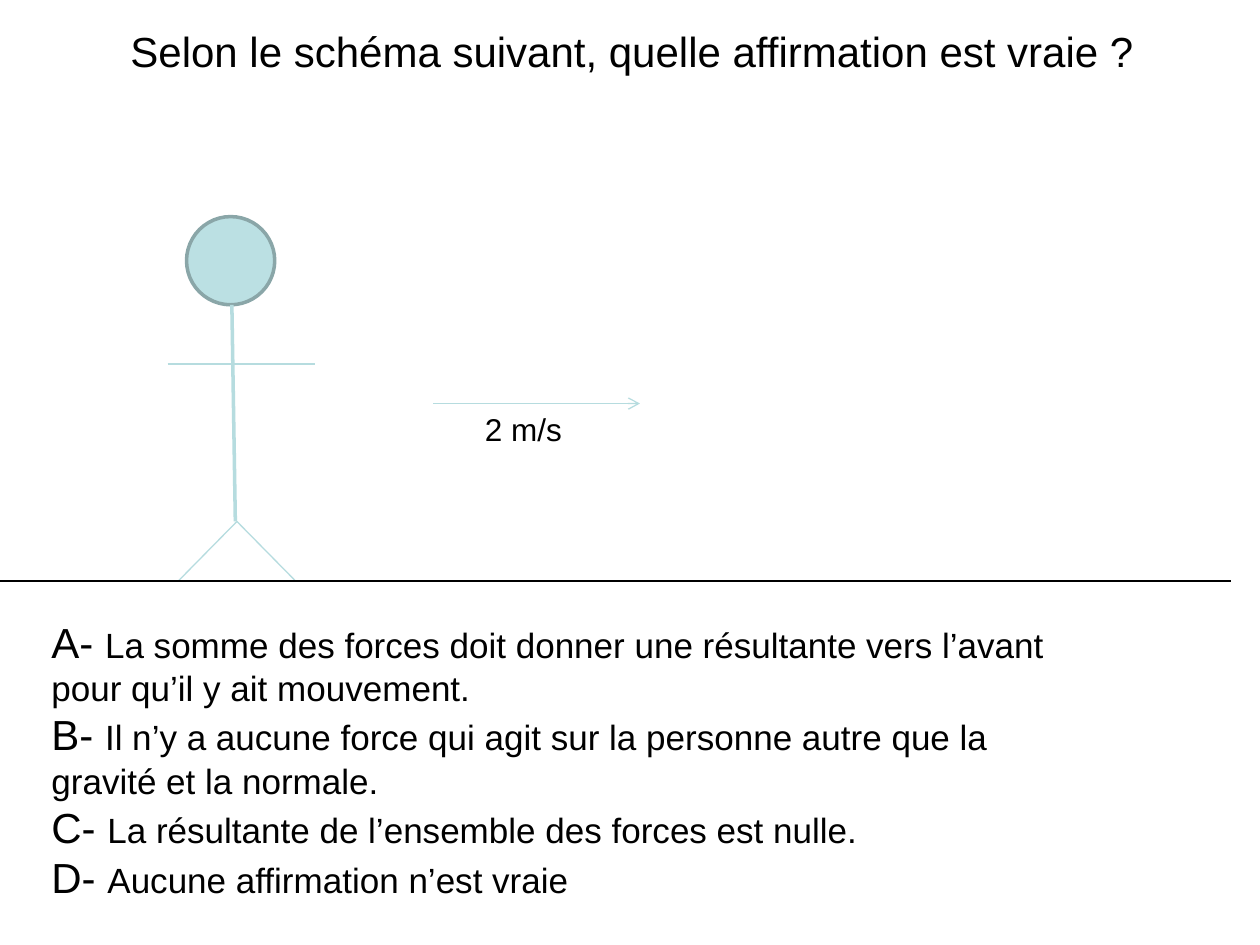
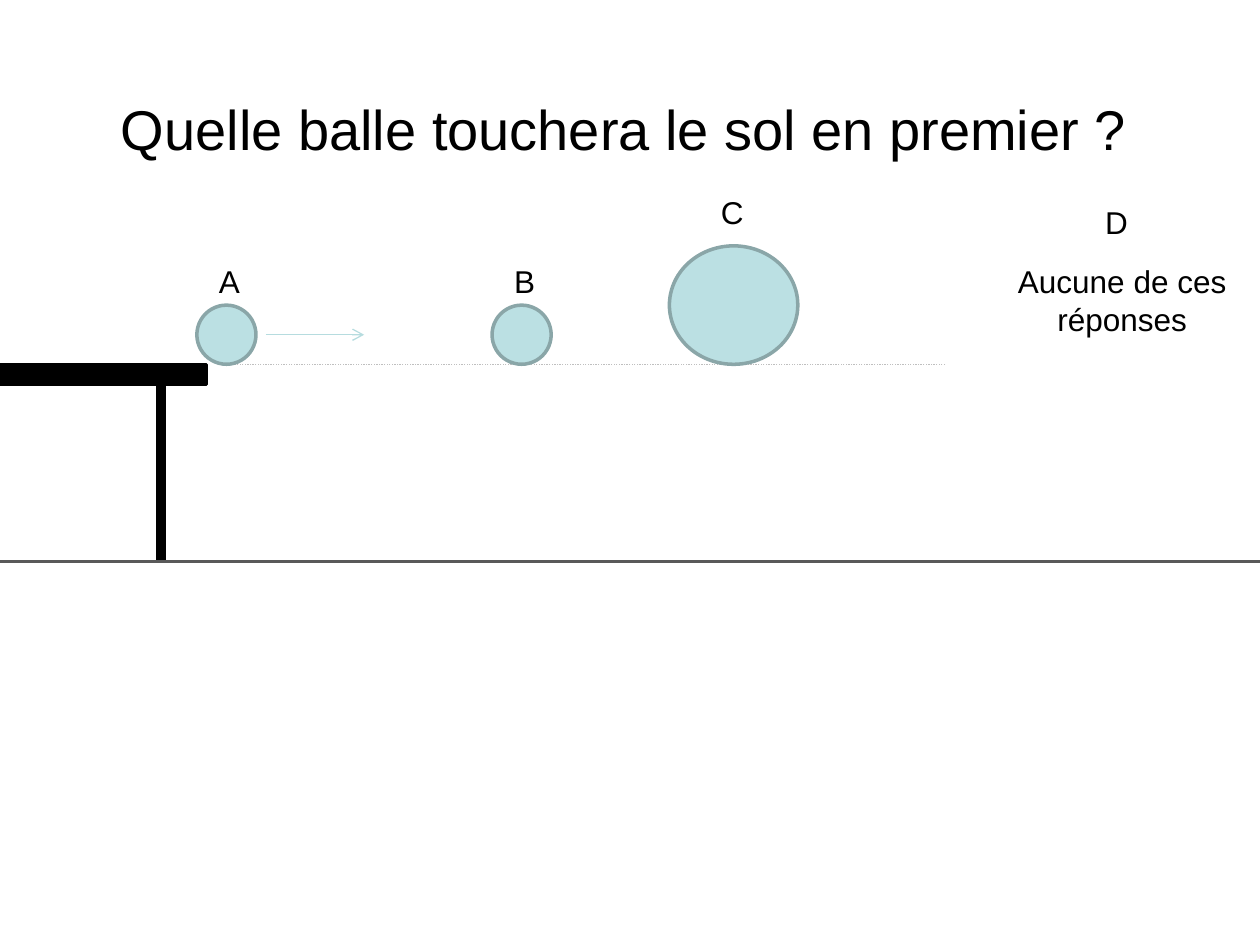
from lxml import etree
from pptx import Presentation
from pptx.dml.color import RGBColor
from pptx.enum.dml import MSO_LINE
from pptx.enum.shapes import MSO_CONNECTOR, MSO_SHAPE
from pptx.enum.text import MSO_AUTO_SIZE, PP_ALIGN
from pptx.oxml.ns import qn
from pptx.util import Pt

STRAIGHT = MSO_CONNECTOR.STRAIGHT
OVAL = MSO_SHAPE.OVAL
RECTANGLE = MSO_SHAPE.RECTANGLE
DOTTED = MSO_LINE.ROUND_DOT
FIT_SHAPE = MSO_AUTO_SIZE.SHAPE_TO_FIT_TEXT
LEFT = PP_ALIGN.LEFT
CENTER = PP_ALIGN.CENTER

BLACK = RGBColor(0x00, 0x00, 0x00)
PALE_TEAL = RGBColor(0xBB, 0xE0, 0xE3)
TEAL_EDGE = RGBColor(0x8A, 0xA6, 0xA8)
TEAL_STROKE = RGBColor(0xB6, 0xDC, 0xDF)
FLOOR_GRAY = RGBColor(0x59, 0x59, 0x59)
GUIDE_GRAY = RGBColor(0xBF, 0xBF, 0xBF)

FONT = "Arial"
SLIDE_WIDTH, SLIDE_HEIGHT = 720, 540
LABEL_SIZE = 18
LETTER_SIZE, ANSWER_SIZE = 24, 20

ANSWERS = [
    ("A- ", "La somme des forces doit donner une résultante vers l’avant pour qu’il y ait mouvement."),
    ("B- ", "Il n’y a aucune force qui agit sur la personne autre que la gravité et la normale."),
    ("C- ", "La résultante de l’ensemble des forces est nulle."),
    ("D- ", "Aucune affirmation n’est vraie"),
]


def add_text(slide, box, paragraphs, align=LEFT):
    frame = slide.shapes.add_textbox(*map(Pt, box)).text_frame
    frame.word_wrap = True
    frame.auto_size = FIT_SHAPE
    for index, runs in enumerate(paragraphs):
        paragraph = frame.paragraphs[0] if index == 0 else frame.add_paragraph()
        paragraph.alignment = align
        for words, size in runs:
            run = paragraph.add_run()
            run.text = words
            for name, value in {"name": FONT, "size": Pt(size)}.items():
                setattr(run.font, name, value)
            run.font.color.rgb = BLACK


def add_label(slide, box, words, size=LABEL_SIZE, align=LEFT):
    add_text(slide, box, [[(words, size)]], align)


def add_solid(slide, kind, box, fill=PALE_TEAL, edge=TEAL_EDGE):
    solid = slide.shapes.add_shape(kind, *map(Pt, box))
    solid.shadow.inherit = False
    solid.fill.solid()
    solid.fill.fore_color.rgb = fill
    solid.line.color.rgb = edge
    solid.line.width = Pt(2)


def add_stroke(slide, start, end, color=TEAL_STROKE, width=0.75, dash=None, arrow=False):
    stroke = slide.shapes.add_connector(STRAIGHT, *map(Pt, (*start, *end)))
    stroke.line.color.rgb = color
    stroke.line.width = Pt(width)
    if dash:
        stroke.line.dash_style = dash
    properties = stroke._element.spPr
    if arrow:
        etree.SubElement(properties.find(qn("a:ln")), qn("a:tailEnd"), type="arrow")
    etree.SubElement(properties, qn("a:effectLst"))


def draw_person(slide, left, top, width, height):
    head = 50.4
    middle = left + width / 2
    hips = (middle - 2.5, top + 174.2)
    foot_spread = 33.5
    add_solid(slide, OVAL, (left + 10.8, top, head, head))
    add_stroke(slide, (middle - 5.4, top + head), (middle - 3.4, hips[1]), width=2)
    add_stroke(slide, (left, top + 84.2), (left + width, top + 84.2))
    for side in (-1, 1):
        add_stroke(slide, hips, (hips[0] + side * foot_spread, top + height))


def draw_speed(slide, left, top, width):
    add_stroke(slide, (left, top), (left + width, top), arrow=True)
    add_label(slide, (left + 22.3, top, 90, 29), "2 m/s")


def draw_answers(slide, box):
    add_text(slide, box, [[(letter, LETTER_SIZE), (answer, ANSWER_SIZE)]
                          for letter, answer in ANSWERS])


def draw_table(slide, left, top, width, height):
    board = 11.5
    add_solid(slide, RECTANGLE, (left, top, width, board), BLACK, BLACK)
    add_solid(slide, RECTANGLE, (left + 90, top + board, 3.8, height - board), BLACK, BLACK)


def draw_ball(slide, left, bottom, width, height, letter, label_shift, label_rise):
    top = bottom - height
    add_solid(slide, OVAL, (left, top, width, height))
    add_label(slide, (left + label_shift, top - label_rise, 39.6, 29), letter)


def draw_no_answer(slide, left, top, width):
    add_label(slide, (left + 61.9, top, 39.6, 29), "D")
    add_label(slide, (left, top + 33.8, width, 51), "Aucune de ces réponses", align=CENTER)


def build_motion_slide(slide):
    ground = 332
    draw_person(slide, 95.8, 123.8, 84.2, ground - 123.8)
    add_stroke(slide, (0, ground), (703.4, ground), BLACK)
    draw_speed(slide, 247.7, 230.6, 118)
    add_label(slide, (67.5, 11.3, 596, 36.4), "Selon le schéma suivant, quelle affirmation est vraie ?", 24)
    draw_answers(slide, (22.3, 348.8, 596, 172))


def build_fall_slide(slide):
    floor, shelf = 320.6, 208.2
    add_label(slide, (62, 50.6, 630, 46), "Quelle balle touchera le sol en premier ?", 32)
    draw_table(slide, 0, shelf, 118.1, floor - shelf)
    add_stroke(slide, (0, floor), (SLIDE_WIDTH, floor), FLOOR_GRAY, 1.75)
    add_stroke(slide, (540, shelf), (129.6, shelf), GUIDE_GRAY, dash=DOTTED)
    for ball in (
        (112.5, shelf, 33.8, 33.8, "A", 5.5, 28.1),
        (281.2, shelf, 33.8, 33.8, "B", 5.5, 28.1),
        (382.5, shelf, 73.4, 67.7, "C", 22.3, 33.8),
    ):
        draw_ball(slide, *ball)
    add_stroke(slide, (151.9, 191.3), (208.1, 191.3), arrow=True)
    draw_no_answer(slide, 562.5, 112.5, 157.5)


def main():
    deck = Presentation()
    deck.slide_width, deck.slide_height = Pt(SLIDE_WIDTH), Pt(SLIDE_HEIGHT)
    blank = deck.slide_layouts[6]
    for build in (build_motion_slide, build_fall_slide):
        build(deck.slides.add_slide(blank))
    deck.save("out.pptx")


if __name__ == "__main__":
    main()
